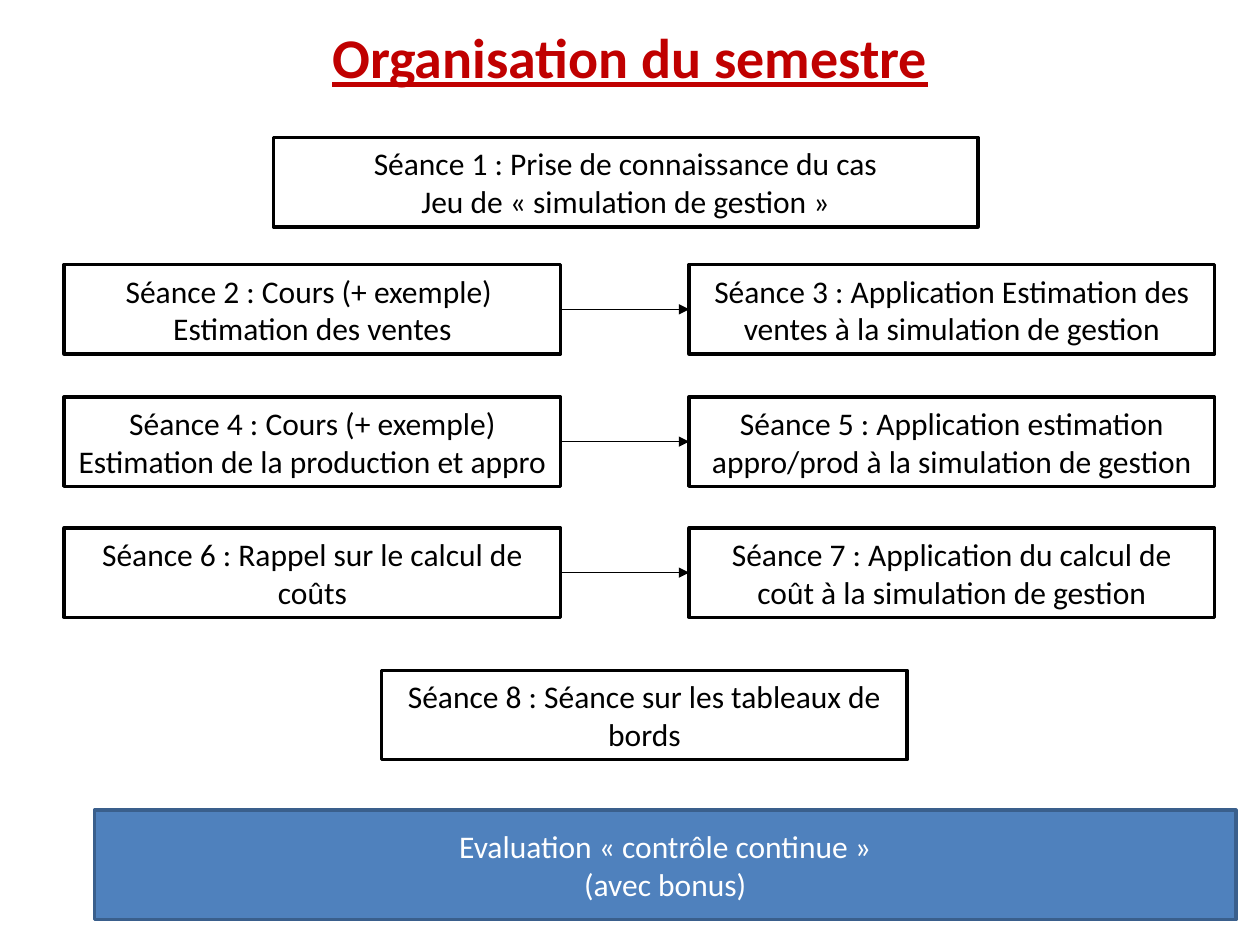
"""Build the slide that shows how the semester is organised."""
from typing import NamedTuple

import lxml.etree
import pptx
import pptx.dml.color
import pptx.enum.shapes
import pptx.enum.text
import pptx.oxml.ns
import pptx.util

WHITE = pptx.dml.color.RGBColor(0xFF, 0xFF, 0xFF)
BLACK = pptx.dml.color.RGBColor(0x00, 0x00, 0x00)
RED = pptx.dml.color.RGBColor(0xC0, 0x00, 0x00)
BLUE = pptx.dml.color.RGBColor(0x4F, 0x81, 0xBD)
NAVY = pptx.dml.color.RGBColor(0x3A, 0x5F, 0x8C)

FONT = "Calibri"
WIDE, HIGH = pptx.util.Inches(10), pptx.util.Inches(7.5)
COLS, ROWS = 100, 75
LEFT, RIGHT = (5.1, 39.4), (54.7, 41.7)
TALL = 7.1


class Box(NamedTuple):
    """A framed text, placed in grid columns and rows."""

    text: str
    col: float
    row: float
    cols: float
    rows: float = TALL
    fill: pptx.dml.color.RGBColor = WHITE
    edge: pptx.dml.color.RGBColor = BLACK
    ink: pptx.dml.color.RGBColor = BLACK


class Pair(NamedTuple):
    """A lesson and the session that applies it, on one row."""

    row: float
    lesson: str
    use: str


START = Box("Séance 1 : Prise de connaissance du cas\nJeu de « simulation de gestion »", 21.7, 10.9, 55.9)
PAIRS = [
    Pair(21, "Séance 2 : Cours (+ exemple) \nEstimation des ventes",
         "Séance 3 : Application Estimation des ventes à la simulation de gestion"),
    Pair(31.5, "Séance 4 : Cours (+ exemple) Estimation de la production et appro",
         "Séance 5 : Application estimation appro/prod à la simulation de gestion"),
    Pair(41.9, "Séance 6 : Rappel sur le calcul de coûts",
         "Séance 7 : Application du calcul de coût à la simulation de gestion"),
]
LAST = Box("Séance 8 : Séance sur les tableaux de bords", 30.3, 53.2, RIGHT[1])
GRADE = Box("Evaluation « contrôle continue »\n(avec bonus)", 7.5, 64.3, 90.6, 8.7, BLUE, NAVY, WHITE)


def grid(col: float, row: float) -> tuple[int, int]:
    """Turn grid columns and rows into slide lengths."""
    return round(WIDE * col / COLS), round(HIGH * row / ROWS)


def style(frame, size: float, ink, bold: bool = False) -> None:
    """Centre the paragraphs and format their runs."""
    for para in frame.paragraphs:
        para.alignment = pptx.enum.text.PP_ALIGN.CENTER
        for run in para.runs:
            run.font.name = FONT
            run.font.size = pptx.util.Pt(size)
            run.font.bold = run.font.underline = bold
            run.font.color.rgb = ink


def add_title(slide, text: str) -> None:
    """Place and format the title."""
    title = slide.shapes.title
    title.left, title.top = grid(5, 1.3)
    title.width, title.height = grid(90, 12.5)
    title.fill.solid()
    title.fill.fore_color.rgb = WHITE
    title.text_frame.text = text
    title.text_frame.vertical_anchor = pptx.enum.text.MSO_ANCHOR.TOP
    style(title.text_frame, 32, RED, True)


def add_box(slide, box: Box):
    """Draw one framed text."""
    shape = slide.shapes.add_shape(
        pptx.enum.shapes.MSO_SHAPE.RECTANGLE, *grid(box.col, box.row), *grid(box.cols, box.rows))
    shape.shadow.inherit = False
    shape.fill.solid()
    shape.fill.fore_color.rgb = box.fill
    shape.line.color.rgb = box.edge
    shape.line.width = pptx.util.Pt(2)
    frame = shape.text_frame
    frame.text = box.text
    frame.word_wrap = True
    frame.vertical_anchor = pptx.enum.text.MSO_ANCHOR.MIDDLE
    style(frame, 18, box.ink)
    return shape


def add_arrow(slide, start, end) -> None:
    """Join the right side of one box to the left side of the next."""
    line = slide.shapes.add_connector(pptx.enum.shapes.MSO_CONNECTOR.STRAIGHT, 0, 0, 0, 0)
    line.begin_connect(start, 3)
    line.end_connect(end, 1)
    line.line.color.rgb = BLACK
    line.line.width = pptx.util.Pt(0.75)
    name = pptx.oxml.ns.qn
    lxml.etree.SubElement(line.line._get_or_add_ln(), name("a:tailEnd"), type="triangle")
    lxml.etree.SubElement(line._element.spPr, name("a:effectLst"))


def main() -> None:
    """Build and save the slide."""
    deck = pptx.Presentation()
    deck.slide_width, deck.slide_height = WIDE, HIGH
    slide = deck.slides.add_slide(deck.slide_layouts[5])
    add_title(slide, "Organisation du semestre")
    add_box(slide, START)
    for pair in PAIRS:
        lesson = add_box(slide, Box(pair.lesson, LEFT[0], pair.row, LEFT[1]))
        use = add_box(slide, Box(pair.use, RIGHT[0], pair.row, RIGHT[1]))
        add_arrow(slide, lesson, use)
    add_box(slide, LAST)
    add_box(slide, GRADE)
    deck.save("out.pptx")


if __name__ == "__main__":
    main()
